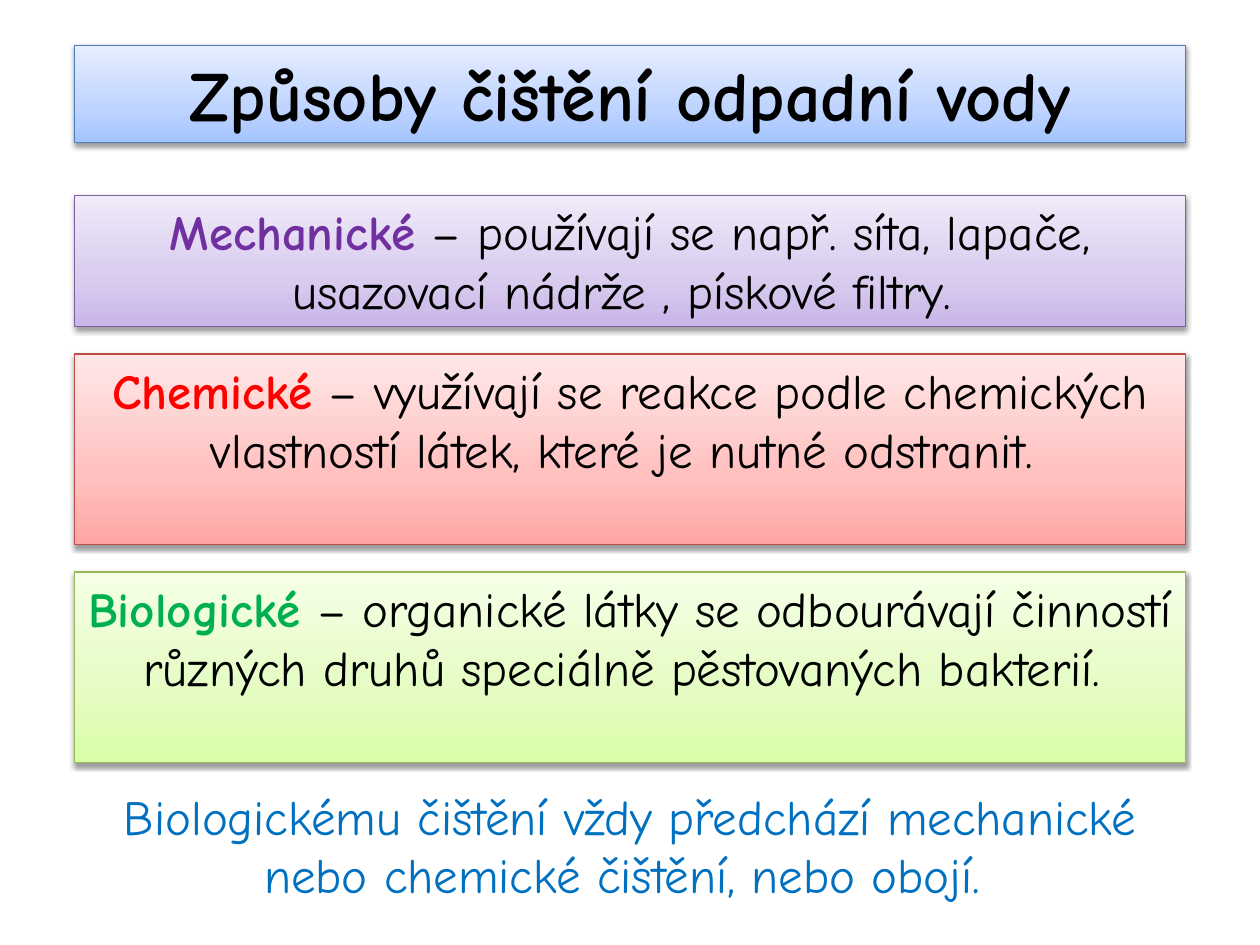
from copy import deepcopy

from lxml import etree
from pptx import Presentation
from pptx.dml.color import RGBColor
from pptx.enum.shapes import MSO_SHAPE
from pptx.enum.text import MSO_ANCHOR, PP_ALIGN
from pptx.oxml.ns import qn
from pptx.util import Inches, Pt

RECTANGLE = MSO_SHAPE.RECTANGLE
TOP = MSO_ANCHOR.TOP
CENTER = PP_ALIGN.CENTER

LEFT, WIDTH = 0.59, 8.82
STOPS = (0, 0.35, 1)
BLACK = "000000"


def color(value):
    return RGBColor.from_string(value)


class SlideBuilder:
    font_name = "Comic Neue"

    def __init__(self, slide):
        self.slide = slide

    def set_text(self, shape, spans, size):
        frame = shape.text_frame
        for name, value in {"word_wrap": True, "vertical_anchor": TOP}.items():
            setattr(frame, name, value)
        para = frame.paragraphs[0]
        para.alignment = CENTER
        for text, ink, bold in spans:
            span = para.add_run()
            span.text = text
            style = {"name": self.font_name, "size": Pt(size), "bold": bold}
            for name, value in style.items():
                setattr(span.font, name, value)
            span.font.color.rgb = color(ink)

    def paint_gradient(self, shape, shades):
        fill = shape.fill
        fill.gradient()
        fill.gradient_angle = 90
        stop_list = shape._element.spPr.find(".//" + qn("a:gsLst"))
        stop_list.append(deepcopy(stop_list[0]))
        for stop, position, shade in zip(fill.gradient_stops, STOPS, shades):
            stop.position = position
            stop.color.rgb = color(shade)

    def add_shadow(self, shape):
        shape.shadow.inherit = False
        effects = shape._element.spPr.find(qn("a:effectLst"))
        shadow = etree.SubElement(
            effects, qn("a:outerShdw"), blurRad=str(Pt(3.1)),
            dist=str(Pt(1.6)), dir="5400000", rotWithShape="0")
        ink = etree.SubElement(shadow, qn("a:srgbClr"), val=BLACK)
        etree.SubElement(ink, qn("a:alpha"), val="38000")

    def panel(self, top, height, shades, border, spans, size=28):
        box = self.slide.shapes.add_shape(
            RECTANGLE, Inches(LEFT), Inches(top), Inches(WIDTH), Inches(height))
        self.paint_gradient(box, shades)
        box.line.color.rgb = color(border)
        box.line.width = Pt(0.75)
        self.add_shadow(box)
        self.set_text(box, spans, size)

    def note(self, left, top, width, height, text, ink):
        box = self.slide.shapes.add_textbox(
            Inches(left), Inches(top), Inches(width), Inches(height))
        self.set_text(box, [(text, ink, False)], 28)


METHODS = [
    (4.54, 1.51, ("DAFDA7", "E4FCC2", "F5FFE7"), "98B955", "Biologické", "00B050",
     " – organické látky se odbourávají činností různých druhů "
     "speciálně pěstovaných bakterií. "),
    (1.55, 1.04, ("C9B5E8", "D8CBEE", "F0EAF9"), "7D60A0", "Mechanické", "7030A0",
     " – používají se např. síta, lapače, usazovací nádrže , pískové filtry. "),
    (2.81, 1.51, ("FFA6A5", "FFC0BF", "FFE7E7"), "BF4C48", "Chemické", "FF0000",
     " – využívají se reakce podle chemických vlastností látek, "
     "které je nutné odstranit. "),
]


def main():
    deck = Presentation()
    deck.slide_width, deck.slide_height = Inches(10), Inches(7.5)
    page = SlideBuilder(deck.slides.add_slide(deck.slide_layouts[6]))
    page.panel(0.36, 0.77, ("A4C4FF", "BFD4FF", "E6EEFF"), "4B7EBC",
               [("Způsoby čištění odpadní vody", BLACK, True)], size=40)
    for top, height, shades, border, term, ink, detail in METHODS:
        page.panel(top, height, shades, border,
                   [(term, ink, True), (detail, BLACK, False)])
    page.note(0.51, 6.19, 8.98, 1.04,
              "Biologickému čištění vždy předchází mechanické "
              "nebo chemické čištění, nebo obojí. ", "0070C0")
    deck.save("out.pptx")


if __name__ == "__main__":
    main()
